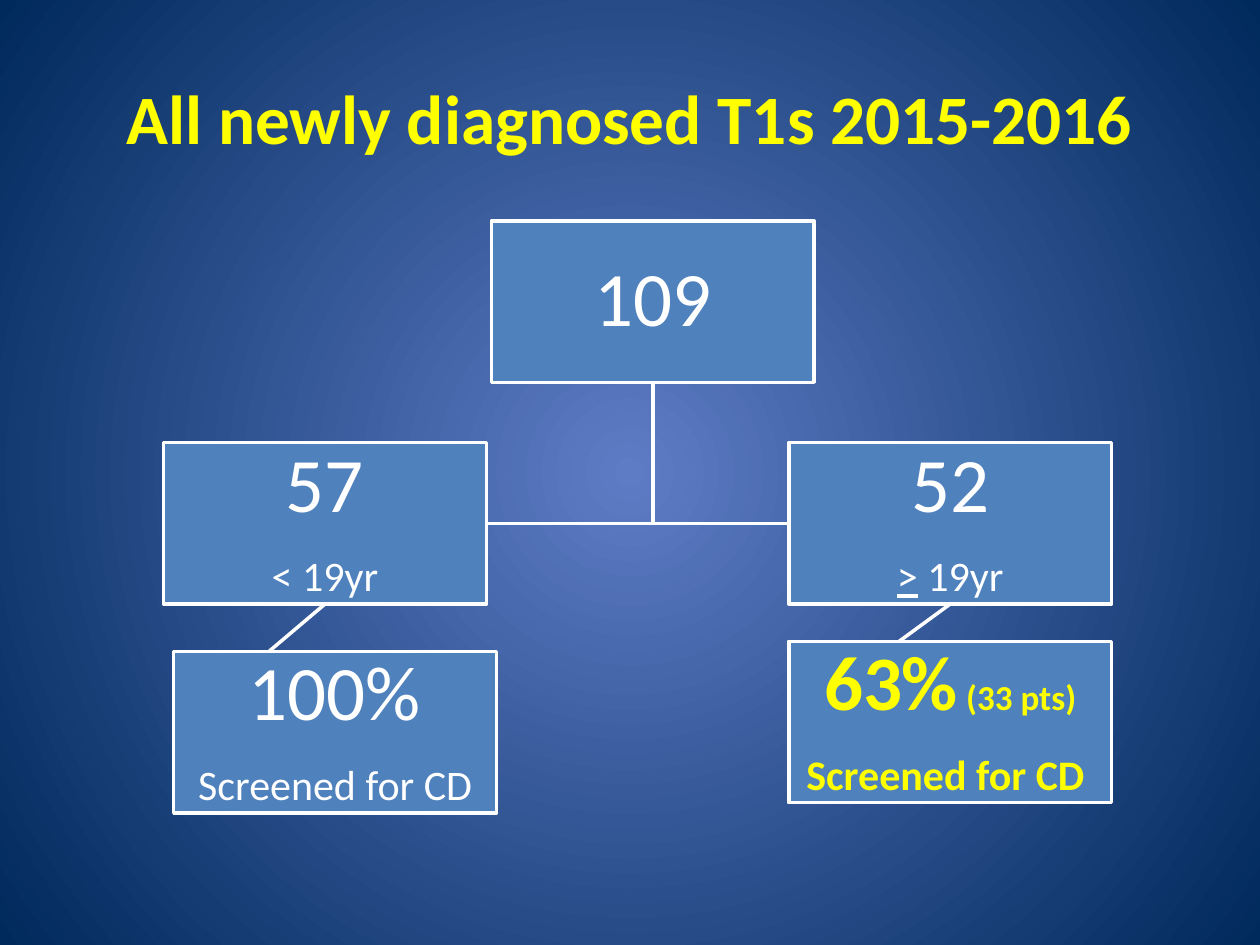
from pptx import Presentation
from pptx.dml.color import RGBColor
from pptx.enum.shapes import MSO_CONNECTOR, MSO_SHAPE
from pptx.enum.text import MSO_ANCHOR as Anchor, PP_ALIGN as Align
from pptx.oxml import parse_xml
from pptx.oxml.ns import nsdecls
from pptx.util import Pt

THEME = {
    "font": "Calibri",
    "glow": "5E7CC5", "edge": "00295C",
    "box": "4F81BD", "plain": "FFFFFF", "accent": "FFFF00",
    "title": 39.6, "figure": 44, "label": 24, "aside": 20,
}
TITLE = "All newly diagnosed T1s 2015-2016"
BOX_W, BOX_H = 184.5, 92.25
INSET, LINE_W = 2, 2
PLAIN = {"color": "plain"}
ACCENT = {"color": "accent", "bold": True}

# name: (left, top, run format, paragraphs of (text, size, extra format))
BOXES = {
    "all": (280.75, 126.25, PLAIN, [[("109", "figure", {})]]),
    "young": (93.5, 252.9, PLAIN,
              [[("57", "figure", {})], [("< 19yr", "label", {})]]),
    "young screened": (99.25, 372.25, PLAIN,
                       [[("100%", "figure", {})],
                        [("Screened for CD", "label", {})]]),
    "adult": (450.75, 252.9, PLAIN,
              [[("52", "figure", {})],
               [(">", "label", {"underline": True}), (" 19yr", "label", {})]]),
    "adult screened": (450.75, 366.5, ACCENT,
                       [[("63%", "figure", {}), (" (33 pts)", "aside", {})],
                        [("Screened for CD ", "label", {})]]),
}
BRANCHES = [("all", "young"), ("all", "adult")]
FOLLOW_UPS = [("young", "young screened"), ("adult", "adult screened")]


def rgb(role):
    return RGBColor.from_string(THEME[role])


def set_line(line):
    line.color.rgb = rgb("plain")
    line.width = Pt(LINE_W)


def add_run(paragraph, text, size, color, **styles):
    run = paragraph.add_run()
    run.text = text
    run.font.color.rgb = rgb(color)
    styles = {"name": THEME["font"], "size": Pt(THEME[size]), **styles}
    for attribute, value in styles.items():
        setattr(run.font, attribute, value)


def paint_background(slide):
    """Radial gradient, light at the centre of the slide."""
    fill = slide.background.fill
    fill.gradient()
    for stop, role, position in zip(fill.gradient_stops, ("glow", "edge"), (0, 1)):
        stop.color.rgb = rgb(role)
        stop.position = position
    linear = slide.element.xpath(".//p:bg//a:lin")[0]
    linear.getparent().replace(linear, parse_xml(
        f'<a:path {nsdecls("a")} path="circle">'
        '<a:fillToRect l="50000" t="50000" r="50000" b="50000"/></a:path>'))


def add_title(slide):
    frame = slide.shapes.add_textbox(Pt(36), Pt(21.6), Pt(648), Pt(90)).text_frame
    frame.word_wrap = True
    frame.vertical_anchor = Anchor.MIDDLE
    frame.paragraphs[0].alignment = Align.CENTER
    add_run(frame.paragraphs[0], TITLE, "title", **ACCENT)


def bottom_centre(name):
    left, top = BOXES[name][:2]
    return left + BOX_W / 2, top + BOX_H


def add_branch(slide, parent, child):
    """Elbow from under the parent to the facing side of the child."""
    x, y = bottom_centre(parent)
    left, top = BOXES[child][:2]
    side = left if left > x else left + BOX_W
    middle = top + BOX_H / 2
    builder = slide.shapes.build_freeform(Pt(x), Pt(y))
    builder.add_line_segments([(Pt(x), Pt(middle)), (Pt(side), Pt(middle))], close=False)
    elbow = builder.convert_to_shape()
    elbow.shadow.inherit = False
    elbow.fill.background()
    set_line(elbow.line)


def add_follow_up(slide, parent, child):
    """Slanted line to the child's left side, partly behind its box."""
    x, y = bottom_centre(parent)
    left, top = BOXES[child][:2]
    link = slide.shapes.add_connector(
        MSO_CONNECTOR.STRAIGHT, Pt(x), Pt(y), Pt(left), Pt(top + BOX_H / 2))
    set_line(link.line)
    link.element.spPr.append(parse_xml(f'<a:effectLst {nsdecls("a")}/>'))


def add_box(slide, left, top, run_format, paragraphs):
    box = slide.shapes.add_shape(
        MSO_SHAPE.RECTANGLE, Pt(left), Pt(top), Pt(BOX_W), Pt(BOX_H))
    box.shadow.inherit = False
    box.fill.solid()
    box.fill.fore_color.rgb = rgb("box")
    set_line(box.line)
    frame = box.text_frame
    frame.word_wrap = True
    frame.vertical_anchor = Anchor.MIDDLE
    for side in ("left", "right", "top", "bottom"):
        setattr(frame, f"margin_{side}", Pt(INSET))
    for index, runs in enumerate(paragraphs):
        paragraph = frame.add_paragraph() if index else frame.paragraphs[0]
        paragraph.alignment = Align.CENTER
        paragraph.line_spacing = 0.9
        paragraph.space_after = Pt(0.35 * THEME["figure"])
        for text, size, extra in runs:
            add_run(paragraph, text, size, **run_format, **extra)


def main():
    deck = Presentation()
    deck.slide_width, deck.slide_height = Pt(720), Pt(540)
    slide = deck.slides.add_slide(deck.slide_layouts[6])
    paint_background(slide)
    add_title(slide)
    for parent, child in BRANCHES:
        add_branch(slide, parent, child)
    for parent, child in FOLLOW_UPS:
        add_follow_up(slide, parent, child)
    for box in BOXES.values():
        add_box(slide, *box)
    deck.save("out.pptx")


if __name__ == "__main__":
    main()
